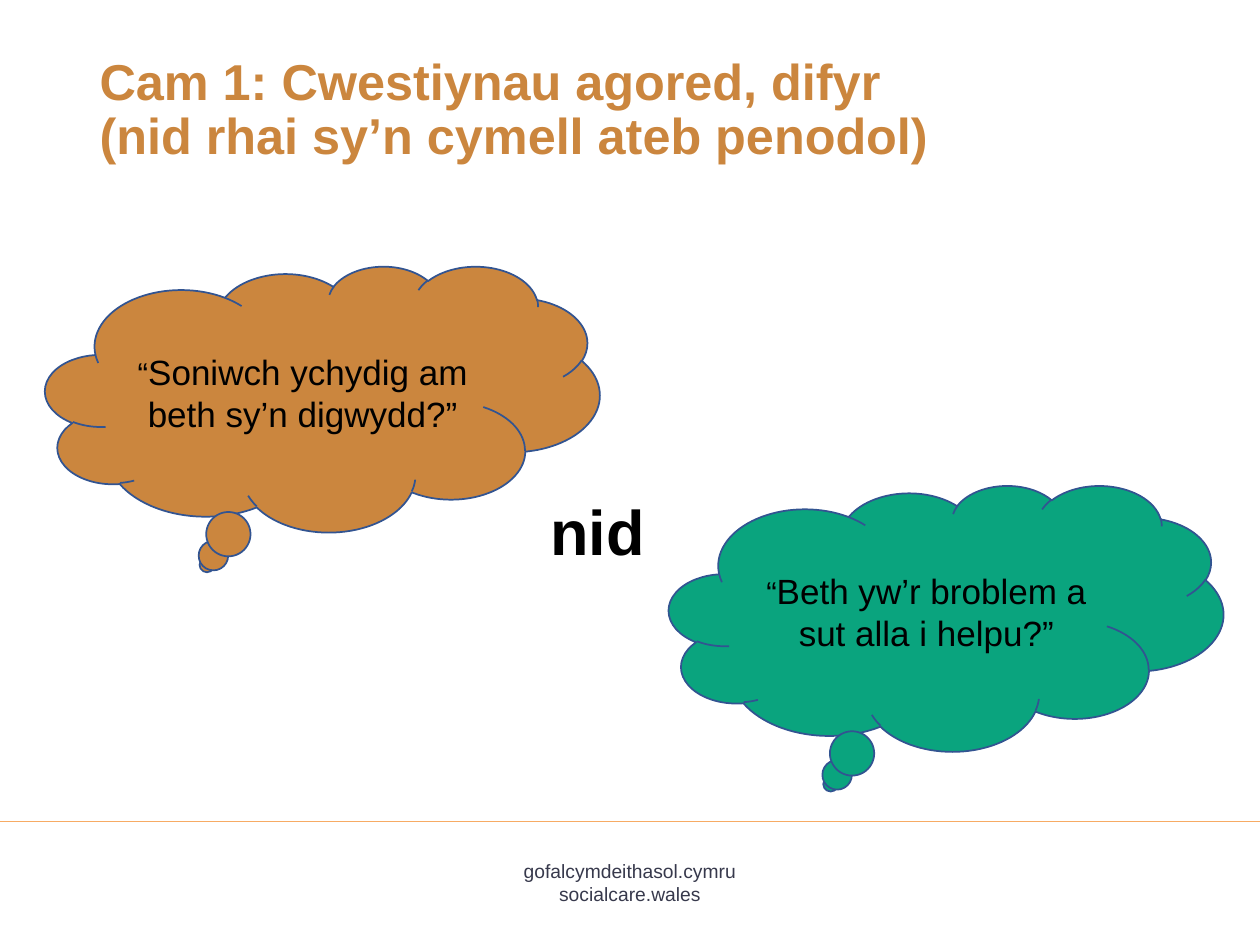
from lxml import etree
from pptx import Presentation
from pptx.dml.color import RGBColor
from pptx.enum.shapes import MSO_CONNECTOR, MSO_SHAPE
from pptx.enum.text import MSO_ANCHOR, PP_ALIGN
from pptx.oxml.ns import qn
from pptx.util import Inches, Pt

CLOUD = MSO_SHAPE.CLOUD_CALLOUT
STRAIGHT = MSO_CONNECTOR.STRAIGHT
TOP, MIDDLE = MSO_ANCHOR.TOP, MSO_ANCHOR.MIDDLE
LEFT, CENTER = PP_ALIGN.LEFT, PP_ALIGN.CENTER

TITLE_ONLY = 5
FONT = "Arial"
COLORS = {
    "ochre": "CB863E",
    "green": "0AA47E",
    "outline": "325491",
    "rule": "F7AB64",
    "footer": "37394C",
    "black": "000000",
}
CLOUD_SIZE = (4.4, 2.11)


def color(name):
    return RGBColor.from_string(COLORS[name])


def style_font(font, size, color_name, bold=False):
    values = {"name": FONT, "size": Pt(size), "bold": bold}
    for attribute, value in values.items():
        setattr(font, attribute, value)
    font.color.rgb = color(color_name)


def style_frame(text_frame, anchor):
    values = {"word_wrap": True, "vertical_anchor": anchor}
    for attribute, value in values.items():
        setattr(text_frame, attribute, value)


def add_title(slide, text, box):
    title = slide.shapes.title
    for attribute, value in zip(("left", "top", "width", "height"), box):
        setattr(title, attribute, Inches(value))
    style_frame(title.text_frame, TOP)
    title.text_frame.text = text
    paragraph = title.text_frame.paragraphs[0]
    paragraph.alignment = LEFT
    paragraph.line_spacing = 0.9
    style_font(paragraph.font, 28.8, "ochre", bold=True)


def add_text(slide, lines, box, size, color_name, bold=False,
             alignment=LEFT, anchor=TOP):
    text_box = slide.shapes.add_textbox(*map(Inches, box))
    text_frame = text_box.text_frame
    style_frame(text_frame, anchor)
    text_frame.text = "\n".join(lines)
    for paragraph in text_frame.paragraphs:
        paragraph.alignment = alignment
        style_font(paragraph.font, size, color_name, bold)


def add_thought(slide, left, top, fill, question):
    cloud = slide.shapes.add_shape(CLOUD, *map(Inches, (left, top, *CLOUD_SIZE)))
    cloud.shadow.inherit = False
    cloud.fill.solid()
    cloud.fill.fore_color.rgb = color(fill)
    cloud.line.color.rgb = color("outline")
    cloud.line.width = Pt(1)
    style_frame(cloud.text_frame, MIDDLE)
    paragraph = cloud.text_frame.paragraphs[0]
    paragraph.alignment = CENTER
    # The opening quote mark is slightly smaller than the question
    for text, size in (("“", 18), (question, 20)):
        run = paragraph.add_run()
        run.text = text
        style_font(run.font, size, "black")


def add_rule(slide, y):
    rule = slide.shapes.add_connector(
        STRAIGHT, *map(Inches, (0, y, 10, y)))
    rule.line.color.rgb = color("rule")
    rule.line.width = Pt(1)
    etree.SubElement(rule._element.spPr, qn("a:effectLst"))


def main():
    presentation = Presentation()
    presentation.slide_width = Inches(10)
    presentation.slide_height = Inches(7.5)
    slide = presentation.slides.add_slide(presentation.slide_layouts[TITLE_ONLY])

    # Footer
    add_text(slide, ["gofalcymdeithasol.cymru", "socialcare.wales"],
             (3.87, 6.77, 2.26, 0.46), 11, "footer", alignment=CENTER)
    add_rule(slide, 6.52)

    # Title
    add_title(slide, "Cam 1: Cwestiynau agored, difyr \v"
                     "(nid rhai sy’n cymell ateb penodol)",
              (0.69, 0.4, 7.99, 1.13))

    # Open question versus leading question
    add_thought(slide, 0.36, 2.11, "ochre",
                "Soniwch ychydig am beth sy’n digwydd?”")
    add_text(slide, ["nid"], (4.27, 3.82, 1.23, 0.78), 36, "black",
             bold=True, anchor=MIDDLE)
    add_thought(slide, 5.31, 3.85, "green",
                "Beth yw’r broblem a sut alla i helpu?”")

    presentation.save("out.pptx")


if __name__ == "__main__":
    main()
